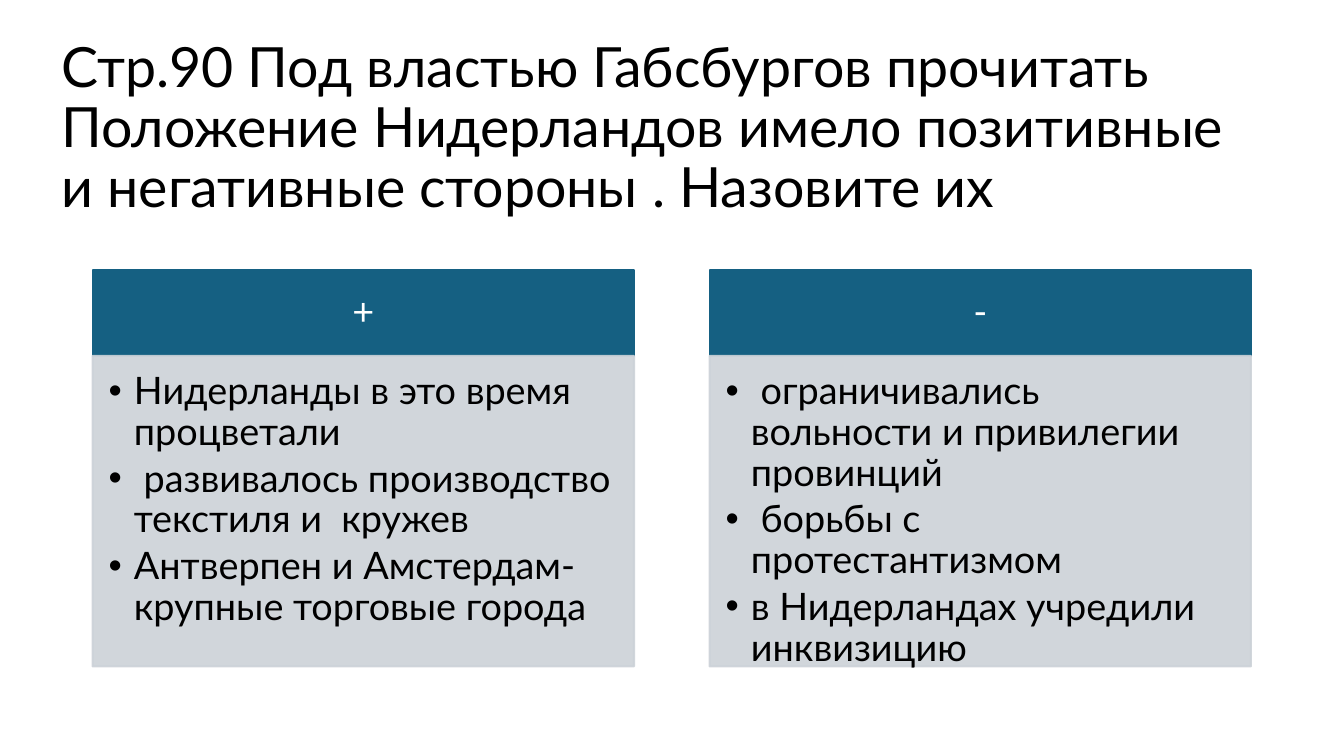
"""Build a slide weighing the pluses and minuses of Habsburg rule in the Netherlands."""
from dataclasses import dataclass

from lxml.etree import SubElement
from pptx import Presentation
from pptx.dml.color import RGBColor
from pptx.enum.shapes import MSO_SHAPE as Shape
from pptx.enum.text import MSO_ANCHOR as Anchor, MSO_AUTO_SIZE as AutoSize, PP_ALIGN as Align
from pptx.oxml.ns import qn
from pptx.util import Pt

FONT = "Lato"
BLACK = RGBColor(0x00, 0x00, 0x00)
WHITE = RGBColor(0xFF, 0xFF, 0xFF)
BLUE = RGBColor(0x15, 0x60, 0x82)
GREY = RGBColor(0xCC, 0xD2, 0xD8)

TITLE = ("Стр.90 Под властью Габсбургов прочитать\v"
         "Положение Нидерландов имело позитивные и негативные стороны . Назовите их")
COLUMN_LEFT = 66.2
COLUMN_STEP = 440.7
COLUMN_WIDTH = 386.7
HEADER_TOP = 193
HEADER_HEIGHT = 61.2
BODY_HEIGHT = 221.8
TEXT_SIZE = 27
BULLET_INDENT = 18


@dataclass(frozen=True)
class Column:
    sign: str
    points: tuple[str, ...]


COLUMNS = (
    Column("+", (
        "Нидерланды в это время процветали",
        " развивалось производство текстиля и  кружев",
        "Антверпен и Амстердам- крупные торговые города",
    )),
    Column("-", (
        " ограничивались вольности и привилегии провинций",
        " борьбы с протестантизмом",
        "в Нидерландах учредили инквизицию",
    )),
)


def format_text(text_frame, size: float, color: RGBColor, align: Align) -> None:
    for paragraph in text_frame.paragraphs:
        paragraph.alignment = align
        paragraph.line_spacing = 0.9
        for run in paragraph.runs:
            run.font.name = FONT
            run.font.size = Pt(size)
            run.font.color.rgb = color


def set_margins(text_frame, left: float, top: float, right: float, bottom: float) -> None:
    text_frame.margin_left, text_frame.margin_top = Pt(left), Pt(top)
    text_frame.margin_right, text_frame.margin_bottom = Pt(right), Pt(bottom)


def add_panel(slide, left: float, top: float, height: float, color: RGBColor, text: str):
    shape = slide.shapes.add_shape(
        Shape.RECTANGLE, Pt(left), Pt(top), Pt(COLUMN_WIDTH), Pt(height))
    shape.shadow.inherit = False
    shape.fill.solid()
    shape.fill.fore_color.rgb = color
    shape.line.color.rgb = color
    shape.line.width = Pt(1.5)
    shape.text_frame.word_wrap = True
    shape.text_frame.text = text
    return shape


def make_translucent(shape, percent: int) -> None:
    for color in shape._element.spPr.iter(qn("a:srgbClr")):
        SubElement(color, qn("a:alpha"), val=str(percent * 1000))


def add_bullet(paragraph) -> None:
    paragraph.space_after = Pt(4)
    properties = paragraph._p.get_or_add_pPr()
    properties.set("marL", str(Pt(BULLET_INDENT)))
    properties.set("indent", str(-Pt(BULLET_INDENT)))
    SubElement(properties, qn("a:buFont"), typeface="Arial")
    SubElement(properties, qn("a:buChar"), char="•")


def add_column(slide, column: Column, left: float) -> None:
    header = add_panel(slide, left, HEADER_TOP, HEADER_HEIGHT, BLUE, column.sign)
    header.text_frame.vertical_anchor = Anchor.MIDDLE
    set_margins(header.text_frame, 15, 8.6, 15, 8.6)
    format_text(header.text_frame, TEXT_SIZE, WHITE, Align.CENTER)

    body = add_panel(slide, left, HEADER_TOP + HEADER_HEIGHT, BODY_HEIGHT, GREY,
                     "\n".join(column.points))
    make_translucent(body, 90)
    body.text_frame.vertical_anchor = Anchor.TOP
    set_margins(body.text_frame, 11.5, 11.5, 15, 17.3)
    format_text(body.text_frame, TEXT_SIZE, BLACK, Align.LEFT)
    for paragraph in body.text_frame.paragraphs:
        add_bullet(paragraph)


def add_title(slide) -> None:
    title = slide.shapes.title
    title.left, title.top, title.width, title.height = Pt(36.7), Pt(28.8), Pt(857.5), Pt(175)
    title.text_frame.text = TITLE
    title.text_frame.word_wrap = True
    title.text_frame.auto_size = AutoSize.NONE
    title.text_frame.vertical_anchor = Anchor.MIDDLE
    set_margins(title.text_frame, 7.2, 3.6, 7.2, 51)
    format_text(title.text_frame, 39.6, BLACK, Align.LEFT)


def main() -> None:
    presentation = Presentation()
    presentation.slide_width, presentation.slide_height = Pt(960), Pt(540)
    slide = presentation.slides.add_slide(presentation.slide_layouts[5])
    add_title(slide)
    for index, column in enumerate(COLUMNS):
        add_column(slide, column, COLUMN_LEFT + index * COLUMN_STEP)
    presentation.save("out.pptx")


if __name__ == "__main__":
    main()
